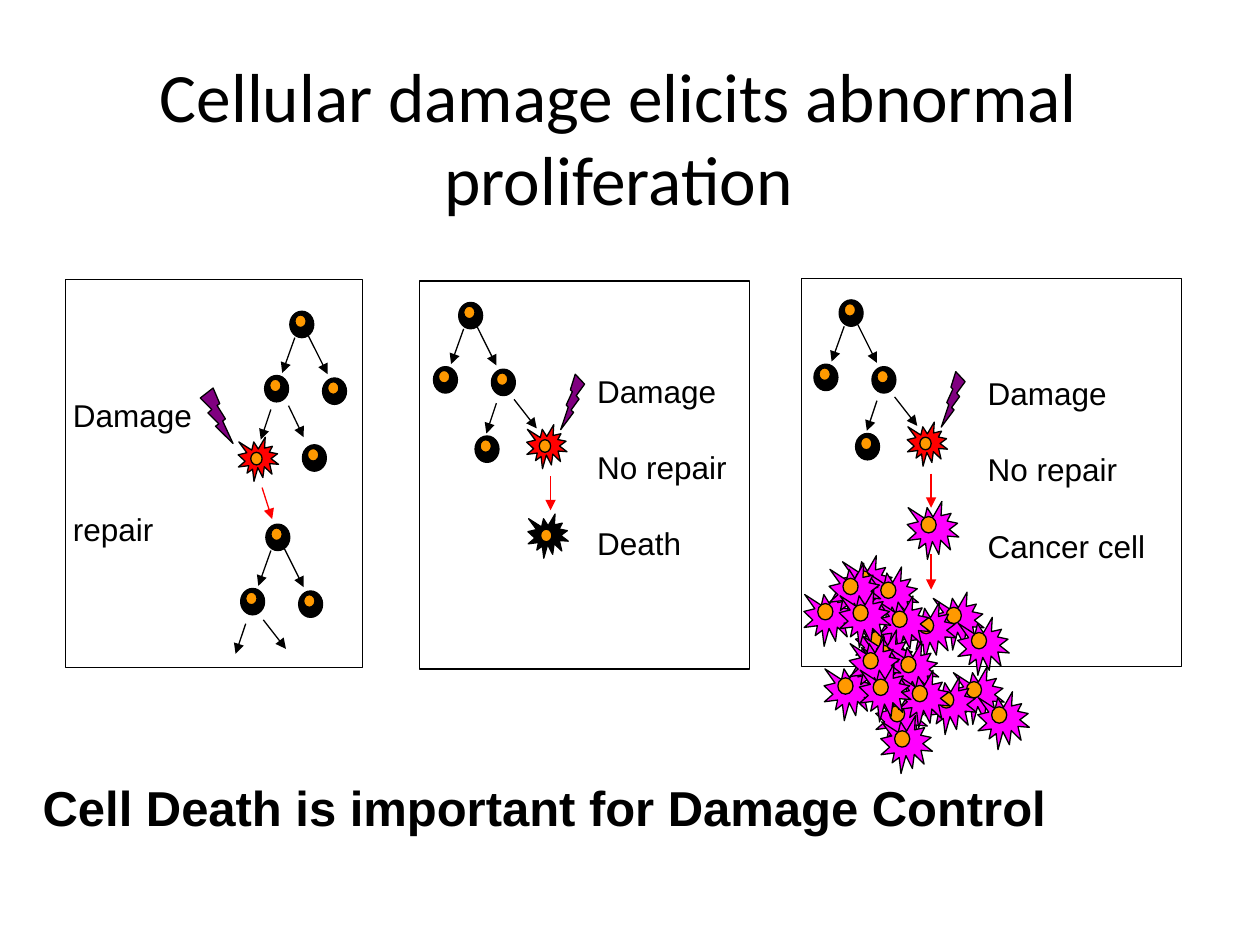
from dataclasses import dataclass

from lxml import etree
from pptx import Presentation
from pptx import util as u
from pptx.dml.color import RGBColor
from pptx.enum import shapes, text
from pptx.oxml import ns

PX = 9144  # EMU in one px: 100 px to the inch


@dataclass(frozen=True)
class Theme:
    ink: str = "000000"
    nucleus: str = "FF9900"
    damaged: str = "FF0000"
    cancer: str = "FF00FF"
    bolt: str = "800080"
    title_font: str = "Calibri"
    body_font: str = "Arial"
    title_size: float = 39.6
    label_size: int = 18
    message_size: int = 28
    line_width: float = 0.75


class Board:
    def __init__(self, slide, theme):
        self.slide, self.theme = slide, theme

    @staticmethod
    def apply(target, **values):
        for name, value in values.items():
            setattr(target, name, value)

    def place(self, shape, *box):
        names = ("left", "top", "width", "height")
        self.apply(shape, **{name: px * PX for name, px in zip(names, box)})

    def font(self, paragraph, name, size, bold=False):
        self.apply(paragraph.font, name=name, size=u.Pt(size), bold=bold)
        paragraph.font.color.rgb = RGBColor.from_string(self.theme.ink)

    def outline(self, shape, color):
        shape.line.color.rgb = RGBColor.from_string(color)
        shape.line.width = u.Pt(self.theme.line_width)

    def title(self, words, *box):
        shape = self.slide.shapes.title
        self.place(shape, *box)
        frame = shape.text_frame
        self.apply(frame, text=words, word_wrap=True, auto_size=text.MSO_AUTO_SIZE.NONE,
                   vertical_anchor=text.MSO_ANCHOR.MIDDLE)
        paragraph = frame.paragraphs[0]
        paragraph.alignment = text.PP_ALIGN.CENTER
        self.font(paragraph, self.theme.title_font, self.theme.title_size)

    def text(self, lines, box, size, gap=0, wrap=True, bold=False):
        shape = self.slide.shapes.add_textbox(*(px * PX for px in box))
        frame = shape.text_frame
        self.apply(frame, text="\n".join(lines), word_wrap=wrap,
                   auto_size=text.MSO_AUTO_SIZE.SHAPE_TO_FIT_TEXT)
        for index, paragraph in enumerate(frame.paragraphs):
            self.font(paragraph, self.theme.body_font, size, bold)
            if index:
                paragraph.space_before = u.Pt(gap)

    def shape(self, kind, box, fill=None, flip=False, parent=None):
        shape = (parent or self.slide).shapes.add_shape(kind, *(px * PX for px in box))
        shape.shadow.inherit = False
        if fill:
            shape.fill.solid()
            shape.fill.fore_color.rgb = RGBColor.from_string(fill)
        else:
            shape.fill.background()
        self.outline(shape, self.theme.ink)
        if flip:
            shape._element.spPr.xfrm.set("flipH", "1")

    def nucleated(self, kind, body, nucleus, fill):
        """A cell body with its nucleus, given relative to the body."""
        group = self.slide.shapes.add_group_shape()
        x, y = body[:2]
        dx, dy, width, height = nucleus
        self.shape(kind, body, fill, parent=group)
        self.shape(shapes.MSO_SHAPE.OVAL, (x + dx, y + dy, width, height),
                   self.theme.nucleus, parent=group)

    def cell(self, x, y):
        self.nucleated(shapes.MSO_SHAPE.OVAL, (x, y, 19, 21), (4, 3, 9, 10), self.theme.ink)

    def spiky_cell(self, x, y, fill):
        self.nucleated(shapes.MSO_SHAPE.EXPLOSION1, (x, y, 32, 35), (10, 12, 9, 10), fill)

    def cancer_cell(self, x, y):
        self.nucleated(shapes.MSO_SHAPE.EXPLOSION1, (x, y, 41, 46), (11, 12, 12, 13),
                       self.theme.cancer)

    def bolt(self, *box, flip=False):
        self.shape(shapes.MSO_SHAPE.LIGHTNING_BOLT, box, self.theme.bolt, flip)

    def arrow(self, start, end, color=None):
        line = self.slide.shapes.add_connector(
            shapes.MSO_CONNECTOR.STRAIGHT, *(px * PX for px in (*start, *end)))
        self.outline(line, color or self.theme.ink)
        etree.SubElement(line.line._get_or_add_ln(), ns.qn("a:tailEnd"), type="triangle")
        etree.SubElement(line._element.spPr, ns.qn("a:effectLst"))

    def division(self, x, y):
        """A mother cell at x, y with two daughters."""
        for dx, dy in ((0, 0), (-20, 51), (26, 53)):
            self.cell(x + dx, y + dy)
        self.arrow((x + 4, y + 21), (x - 6, y + 49))
        self.arrow((x + 14, y + 18), (x + 30, y + 50))

    def offspring_arrows(self, x, y, right_tip=(36, 47)):
        """Two arrows leading down from the cell at x, y."""
        self.arrow((x + 4, y + 27), (x - 4, y + 51))
        self.arrow((x + 18, y + 24), (x + right_tip[0], y + right_tip[1]))

    def panel(self, *box):
        self.shape(shapes.MSO_SHAPE.RECTANGLE, box)

    def unrepaired_lineage(self, x, y):
        """A division whose right daughter gives one sound and one damaged cell."""
        self.division(x, y)
        self.offspring_arrows(x + 26, y + 53)
        self.cell(x + 13, y + 106)
        self.bolt(x + 81, y + 57, 19, 44, flip=True)
        self.spiky_cell(x + 54, y + 97, self.theme.damaged)
        self.arrow((x + 73, y + 138), (x + 73, y + 165), self.theme.damaged)


def main():
    presentation = Presentation()
    presentation.slide_width, presentation.slide_height = 1000 * PX, 750 * PX
    slide = presentation.slides.add_slide(presentation.slide_layouts[5])
    theme = Theme()
    board = Board(slide, theme)
    board.title("Cellular damage elicits abnormal proliferation", 66, 46, 850, 125)

    # Panel 1: damage is repaired
    board.panel(52, 222, 236, 308)
    board.division(230, 247)
    board.offspring_arrows(211, 298, right_tip=(30, 49))
    board.cell(240, 353)
    board.bolt(159, 308, 26, 44)
    board.spiky_cell(189, 347, theme.damaged)
    board.arrow((208, 387), (216, 412), theme.damaged)
    board.division(211, 416)
    board.offspring_arrows(191, 468)
    board.text(["Damage", "repair"], (48, 309, 115, 130), theme.label_size, gap=44)

    # Panel 2: no repair, the cell dies
    board.panel(333, 223, 262, 308)
    board.unrepaired_lineage(364, 240)
    board.spiky_cell(419, 408, theme.ink)

    # Panel 3: no repair, the cell turns cancerous
    board.panel(636, 221, 302, 308)
    board.unrepaired_lineage(666, 238)
    board.cancer_cell(720, 398)
    board.arrow((739, 440), (739, 468), theme.damaged)

    for outcome, x, y in (("Death", 464, 290), ("Cancer cell", 774, 292)):
        board.text(["Damage", "No repair", outcome], (x, y, 148, 160),
                   theme.label_size, gap=22)

    # Tumour: one cluster, repeated further down
    cluster = ((740, 470), (760, 490), (718, 478), (668, 441), (688, 450), (679, 489),
               (638, 467), (658, 447), (697, 473), (666, 468), (683, 509))
    for dx, dy in ((0, 0), (16, 59)):
        for x, y in cluster:
            board.cancer_cell(x + dx, y + dy)

    # Closing message
    board.text(["Cell Death is important for Damage Control"], (24, 612, 818, 57),
               theme.message_size, wrap=False, bold=True)
    presentation.save("out.pptx")


if __name__ == "__main__":
    main()
